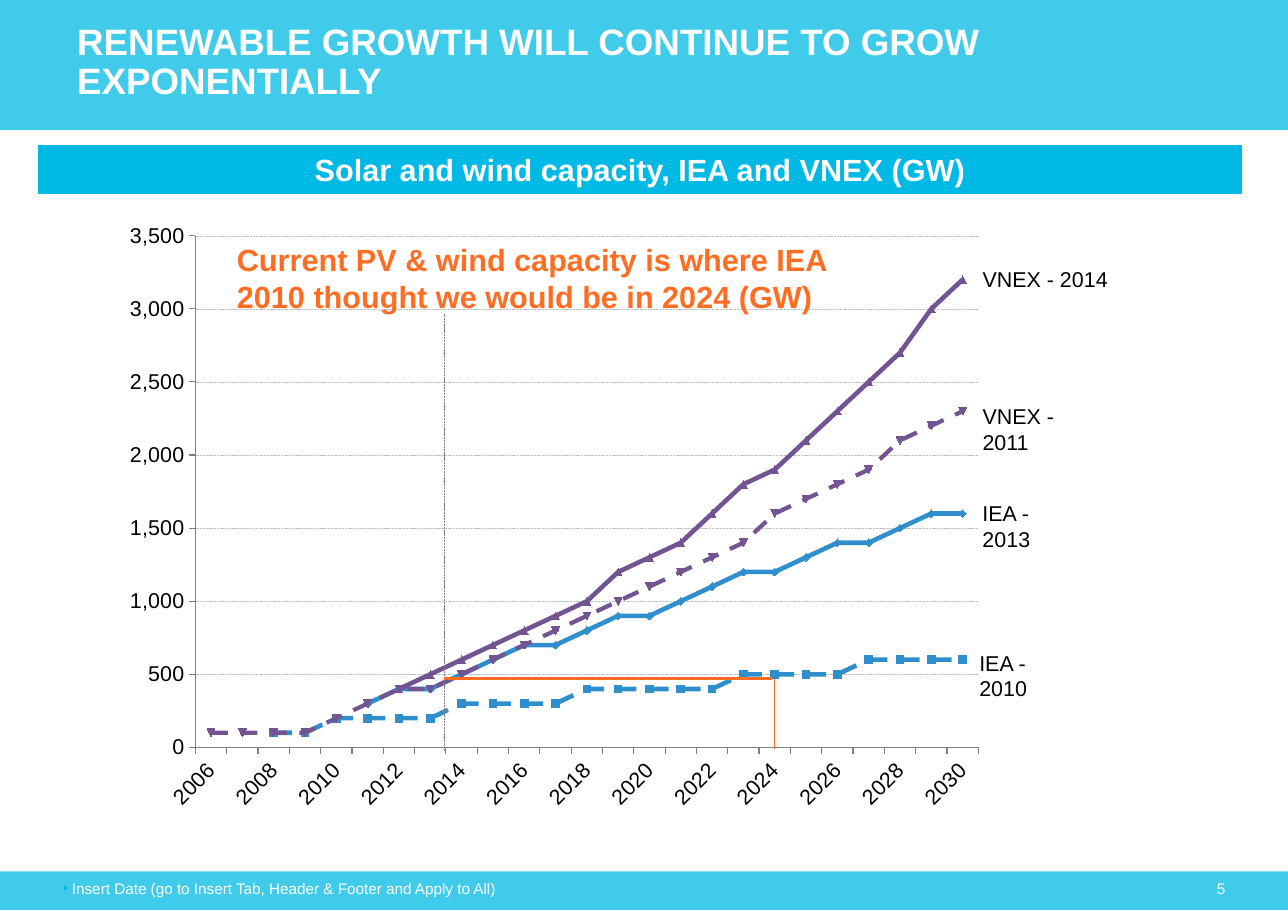
from lxml import etree
from pptx import Presentation
from pptx.chart.data import CategoryChartData
from pptx.dml.color import RGBColor
from pptx.enum.chart import XL_CHART_TYPE, XL_TICK_MARK
from pptx.enum.dml import MSO_LINE
from pptx.enum.shapes import MSO_CONNECTOR, MSO_SHAPE
from pptx.enum.text import MSO_ANCHOR, MSO_AUTO_SIZE, PP_ALIGN
from pptx.oxml import parse_xml
from pptx.oxml.ns import nsdecls, qn
from pptx.util import Pt

LINE_CHART = XL_CHART_TYPE.LINE
OUT = XL_TICK_MARK.OUTSIDE
DASH, DOTS = MSO_LINE.DASH, MSO_LINE.SQUARE_DOT
STRAIGHT = MSO_CONNECTOR.STRAIGHT
RECT = MSO_SHAPE.RECTANGLE
TOP, MIDDLE = MSO_ANCHOR.TOP, MSO_ANCHOR.MIDDLE
NO_FIT = MSO_AUTO_SIZE.NONE
LEFT, CENTER, RIGHT = PP_ALIGN.LEFT, PP_ALIGN.CENTER, PP_ALIGN.RIGHT

WIDTH, HEIGHT = 841.68, 595.44
FONT = "Arial"
WHITE, BLACK, GREY, PALE = "FFFFFF", "000000", "808080", "C0C0C0"
CYAN, SKY, ORANGE = "00B9E4", "40CBEB", "FF6D22"
BLUE, PURPLE = "2F8FCC", "725492"

YEARS = range(2006, 2031)
# Colour, line width, dash, first year, capacity in hundreds of GW
CURVES = [
    (BLUE, 3, DASH, 2008, [1, 1, 2, 2, 2, 2, 3, 3, 3, 3, 4, 4, 4, 4, 4,
                           5, 5, 5, 5, 6, 6, 6, 6]),
    (BLUE, 3, None, 2011, [3, 4, 4, 5, 6, 7, 7, 8, 9, 9, 10, 11, 12, 12,
                           13, 14, 14, 15, 16, 16]),
    (PURPLE, 2.75, DASH, 2006, [1, 1, 1, 1, 2, 3, 4, 4, 5, 6, 7, 8, 9, 10, 11,
                                12, 13, 14, 16, 17, 18, 19, 21, 22, 23]),
    (PURPLE, 3, None, 2012, [4, 5, 6, 7, 8, 9, 10, 12, 13, 14, 16, 18, 19,
                             21, 23, 25, 27, 30, 32]),
]
LABELS = [
    ("IEA - 2010", 632.9, 421.2, 72),
    ("IEA - 2013", 635, 323.3, 72),
    ("VNEX - 2011", 635, 259.9, 76),
    ("VNEX - 2014", 635, 170.6, 120),
]
MARKS = [
    ((290.2, 491, 290.2, 205.2), GREY, 0.5, DOTS),
    ((290.2, 443.5, 504.7, 443.5), ORANGE, 2.25, None),
    ((506.2, 443.5, 506.2, 489.6), ORANGE, 0.5, None),
]


def color(code):
    return RGBColor.from_string(code)


def assign(item, values):
    for name, value in values.items():
        setattr(item, name, value)


def set_font(font, size, code, bold=False):
    assign(font, {"name": FONT, "size": Pt(size), "bold": bold})
    font.color.rgb = color(code)


def set_line(line, code, width, dash=None):
    line.color.rgb = color(code)
    assign(line, {"width": Pt(width), "dash_style": dash})


def write(shape, text, size, code, bold=False, align=LEFT, anchor=TOP,
          inset=(0, 0), bullet=False, space=None):
    frame = shape.text_frame
    across, down = (Pt(gap) for gap in inset)
    assign(frame, {"text": text, "word_wrap": True, "auto_size": NO_FIT,
                   "vertical_anchor": anchor,
                   "margin_left": across, "margin_right": across,
                   "margin_top": down, "margin_bottom": down})
    para = frame.paragraphs[0]
    assign(para, {"alignment": align, "line_spacing": space,
                  "space_before": Pt(0)})
    if bullet:
        add_bullet(para)
    set_font(para.font, size, code, bold)


def add_bullet(para):
    props = para._p.get_or_add_pPr()
    props.set("marL", str(Pt(6)))
    props.set("indent", str(-Pt(6)))
    tint = etree.SubElement(props, qn("a:buClr"))
    etree.SubElement(tint, qn("a:srgbClr"), val=CYAN)
    etree.SubElement(props, qn("a:buFont"), typeface=FONT)
    etree.SubElement(props, qn("a:buChar"), char="•")


def add_text(slide, place, *words, **style):
    box = slide.shapes.add_textbox(*map(Pt, place))
    write(box, *words, **style)


def add_band(slide, place, code):
    band = slide.shapes.add_shape(RECT, *map(Pt, place))
    band.shadow.inherit = False
    band.fill.solid()
    band.fill.fore_color.rgb = color(code)
    band.line.fill.background()
    return band


def add_mark(slide, ends, *style):
    mark = slide.shapes.add_connector(STRAIGHT, *map(Pt, ends))
    set_line(mark.line, *style)
    etree.SubElement(mark.element.spPr, qn("a:effectLst"))


def add_title(slide, text):
    title = slide.shapes.title
    tree = title.element.getparent()
    tree.append(title.element)
    assign(title, {"left": Pt(50.4), "top": Pt(8.6),
                   "width": Pt(614.2), "height": Pt(65.5)})
    write(title, text, 24, WHITE, bold=True, anchor=MIDDLE, space=0.9)


def add_curves(slide):
    data = CategoryChartData(number_format="#,##0")
    data.categories = [str(year) for year in YEARS]
    for order, (*_, start, values) in enumerate(CURVES, 1):
        gaps = [None] * (start - YEARS[0])
        data.add_series(f"Series {order}", gaps + [100 * v for v in values])
    place = map(Pt, (79.2, 146.2, 655.2, 393.1))
    chart = slide.shapes.add_chart(LINE_CHART, *place, data).chart
    assign(chart, {"has_legend": False, "has_title": False})
    set_font(chart.font, 14, BLACK)
    plot = chart.plots[0]
    plot.vary_by_categories = False
    for series, (code, width, dash, *_) in zip(plot.series, CURVES):
        series.smooth = False
        series.marker.style = None
        set_line(series.format.line, code, width, dash)
    set_axes(chart)
    set_plot(chart)


def set_axes(chart):
    across, up = chart.category_axis, chart.value_axis
    for axis in (across, up):
        axis.major_tick_mark = OUT
        set_line(axis.format.line, GREY, 0.75)
        set_font(axis.tick_labels.font, 14, BLACK)
    assign(up, {"minimum_scale": 0, "maximum_scale": 3500, "major_unit": 500,
                "has_major_gridlines": True})
    assign(up.tick_labels, {"number_format": "#,##0",
                            "number_format_is_linked": False})
    set_line(up.major_gridlines.format.line, PALE, 0.25, DOTS)
    node = chart.element.xpath(".//c:catAx")[0]
    node.find(qn("c:txPr")).find(qn("a:bodyPr")).set("rot", "-2700000")
    skip = parse_xml(f'<c:tickLblSkip {nsdecls("c")} val="2"/>')
    node.find(qn("c:noMultiLvlLbl")).addprevious(skip)


def set_plot(chart):
    """Fix the inner plot area as shares of the chart."""
    area = chart.element.xpath(".//c:plotArea")[0]
    for old in area.findall(qn("c:layout")):
        area.remove(old)
    layout = etree.Element(qn("c:layout"))
    manual = etree.SubElement(layout, qn("c:manualLayout"))
    parts = {"layoutTarget": "inner", "xMode": "edge", "yMode": "edge",
             "x": 0.074, "y": 0.02, "w": 0.781, "h": 0.851}
    for name, value in parts.items():
        etree.SubElement(manual, qn(f"c:{name}"), val=str(value))
    area.insert(0, layout)


def main():
    deck = Presentation()
    assign(deck, {"slide_width": Pt(WIDTH), "slide_height": Pt(HEIGHT)})
    slide = deck.slides.add_slide(deck.slide_layouts[5])
    add_band(slide, (0, 569.5, WIDTH, 25.2), SKY)
    add_band(slide, (0, 0, WIDTH, 85), SKY)
    add_title(slide, "RENEWABLE GROWTH WILL CONTINUE TO GROW EXPONENTIALLY")
    add_curves(slide)
    for text, left, top, width in LABELS:
        add_text(slide, (left, top, width, 40), text, 14, BLACK,
                 inset=(7.2, 3.6))
    for mark in MARKS:
        add_mark(slide, *mark)
    add_text(slide, (154.8, 157.5, 409, 84),
             "Current PV & wind capacity is where IEA 2010 thought "
             "we would be in 2024 (GW)", 20, ORANGE, bold=True)
    banner = add_band(slide, (25.2, 95, 786.2, 31.7), CYAN)
    set_line(banner.line, CYAN, 0.75)
    write(banner, "Solar and wind capacity, IEA and VNEX (GW)", 20, WHITE,
          bold=True, align=CENTER, anchor=MIDDLE, inset=(7.2, 3.6))
    add_text(slide, (41, 574.6, 368.6, 12.2),
             "Insert Date (go to Insert Tab, Header & Footer and Apply to All)",
             10, WHITE, bullet=True)
    add_text(slide, (755.3, 574.6, 45.4, 12.2), "5", 10, WHITE, align=RIGHT)
    deck.save("out.pptx")


if __name__ == "__main__":
    main()
